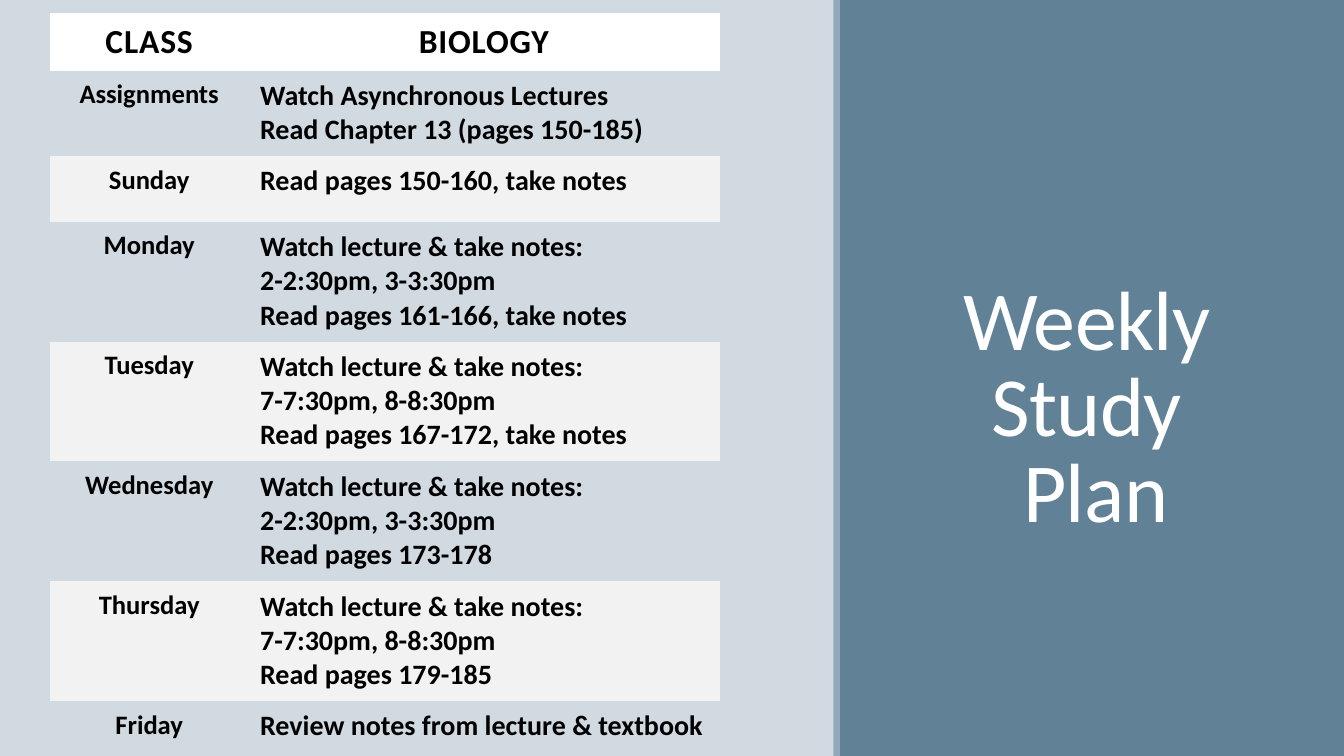
from dataclasses import dataclass

from pptx import Presentation
from pptx.dml.color import RGBColor
from pptx.enum.shapes import MSO_SHAPE
from pptx.enum.text import MSO_ANCHOR, PP_ALIGN
from pptx.oxml.ns import qn
from pptx.util import Inches, Pt

SLIDE_WIDTH, SLIDE_HEIGHT = Inches(13.333), Inches(7.5)
FONT = "Calibri"
PALE, STEEL, MIST = "D1D9E1", "618197", "92A9B9"
WHITE, BLACK, BAND = "FFFFFF", "000000", "F2F2F2"
NO_STYLE = "{2D5ABB26-0587-4C30-8999-92F81FD0307C}"

# Percent of the slide's width or height
COLUMN_SHARES = (14.78, 35.03)
LINE_SHARE, PADDING_SHARE = 4.53, 2.27


@dataclass(frozen=True)
class Box:
    """A frame in percent of the slide's width and height."""
    left: float
    top: float
    width: float
    height: float

    def lengths(self) -> tuple[int, int, int, int]:
        return (across(self.left), down(self.top),
                across(self.width), down(self.height))


@dataclass(frozen=True)
class Panel:
    box: Box
    color: str


@dataclass(frozen=True)
class PlanRow:
    label: str
    tasks: tuple[str, ...]
    fill: str | None = None
    height: float = 0

    def share(self) -> float:
        return self.height or LINE_SHARE * len(self.tasks) + PADDING_SHARE


def lecture_day(day: str, times: str, reading: str, fill: str | None = None) -> PlanRow:
    return PlanRow(day, ("Watch lecture & take notes:", times, reading), fill)


EARLY, LATE = "2-2:30pm, 3-3:30pm", "7-7:30pm, 8-8:30pm"
PANELS = (
    Panel(Box(62.5, 0, 37.5, 100), STEEL),
    Panel(Box(62, 0, 0.5, 100), MIST),
)
TITLE_BOX = Box(66.53, 29.33, 30, 42.67)
PLAN = (
    PlanRow("CLASS", ("BIOLOGY",), WHITE, 7.6),
    PlanRow("Assignments", ("Watch Asynchronous Lectures",
                            "Read Chapter 13 (pages 150-185)")),
    PlanRow("Sunday", ("Read pages 150-160, take notes",), BAND, 8.67),
    lecture_day("Monday", EARLY, "Read pages 161-166, take notes"),
    lecture_day("Tuesday", LATE, "Read pages 167-172, take notes", BAND),
    lecture_day("Wednesday", EARLY, "Read pages 173-178"),
    lecture_day("Thursday", LATE, "Read pages 179-185", BAND),
    PlanRow("Friday", ("Review notes from lecture & textbook",)),
)
TABLE_BOX = Box(3.75, 1.73, sum(COLUMN_SHARES), sum(row.share() for row in PLAN))


def across(percent: float) -> int:
    return round(SLIDE_WIDTH * percent / 100)


def down(percent: float) -> int:
    return round(SLIDE_HEIGHT * percent / 100)


def paint(fill, color: str) -> None:
    fill.solid()
    fill.fore_color.rgb = RGBColor.from_string(color)


def write(frame, *lines: str, size: float, color: str = BLACK, bold: bool = False,
          align=PP_ALIGN.LEFT, tracking: float = 0, spacing: float = 1) -> None:
    """Write one paragraph per line; a vertical tab breaks inside a paragraph."""
    for index, line in enumerate(lines):
        paragraph = frame.add_paragraph() if index else frame.paragraphs[0]
        paragraph.text = line
        paragraph.alignment = align
        paragraph.line_spacing = spacing
        for run in paragraph.runs:
            font = run.font
            font.name, font.size, font.bold = FONT, Pt(size), bold
            paint(font.fill, color)
            run._r.get_or_add_rPr().set("spc", str(round(tracking * 100)))


def draw_panel(slide, panel: Panel) -> None:
    shape = slide.shapes.add_shape(MSO_SHAPE.RECTANGLE, *panel.box.lengths())
    shape.shadow.inherit = False
    paint(shape.fill, panel.color)
    shape.line.fill.background()


def draw_title(slide) -> None:
    frame = slide.shapes.add_textbox(*TITLE_BOX.lengths()).text_frame
    frame.word_wrap = True
    frame.vertical_anchor = MSO_ANCHOR.BOTTOM
    write(frame, "Weekly \vStudy \vPlan", size=60, color=WHITE,
          align=PP_ALIGN.CENTER, tracking=-0.5, spacing=0.85)


def format_cell(cell, fill: str | None) -> None:
    cell.margin_left, cell.margin_right = Inches(0.11), Inches(0.12)
    cell.margin_top = cell.margin_bottom = Inches(0.08)
    if fill:
        paint(cell.fill, fill)
    else:
        cell.fill.background()


def draw_plan(slide) -> None:
    table = slide.shapes.add_table(len(PLAN), len(COLUMN_SHARES),
                                   *TABLE_BOX.lengths()).table
    table.horz_banding = False
    table._tbl.tblPr.find(qn("a:tableStyleId")).text = NO_STYLE
    for column, share in zip(table.columns, COLUMN_SHARES):
        column.width = across(share)
    for index, (row, plan) in enumerate(zip(table.rows, PLAN)):
        row.height = down(plan.share())
        label, tasks = row.cells
        for cell in (label, tasks):
            format_cell(cell, plan.fill)
        header = index == 0
        tracking = 0.6 if header else 0
        write(label.text_frame, plan.label, size=24 if header else 19, bold=True,
              align=PP_ALIGN.CENTER, tracking=tracking)
        write(tasks.text_frame, *plan.tasks, size=24 if header else 20, bold=True,
              align=PP_ALIGN.CENTER if header else PP_ALIGN.LEFT, tracking=tracking)


def main() -> None:
    presentation = Presentation()
    presentation.slide_width, presentation.slide_height = SLIDE_WIDTH, SLIDE_HEIGHT
    slide = presentation.slides.add_slide(presentation.slide_layouts[6])
    paint(slide.background.fill, PALE)
    for panel in PANELS:
        draw_panel(slide, panel)
    draw_title(slide)
    draw_plan(slide)
    presentation.save("out.pptx")


if __name__ == "__main__":
    main()
